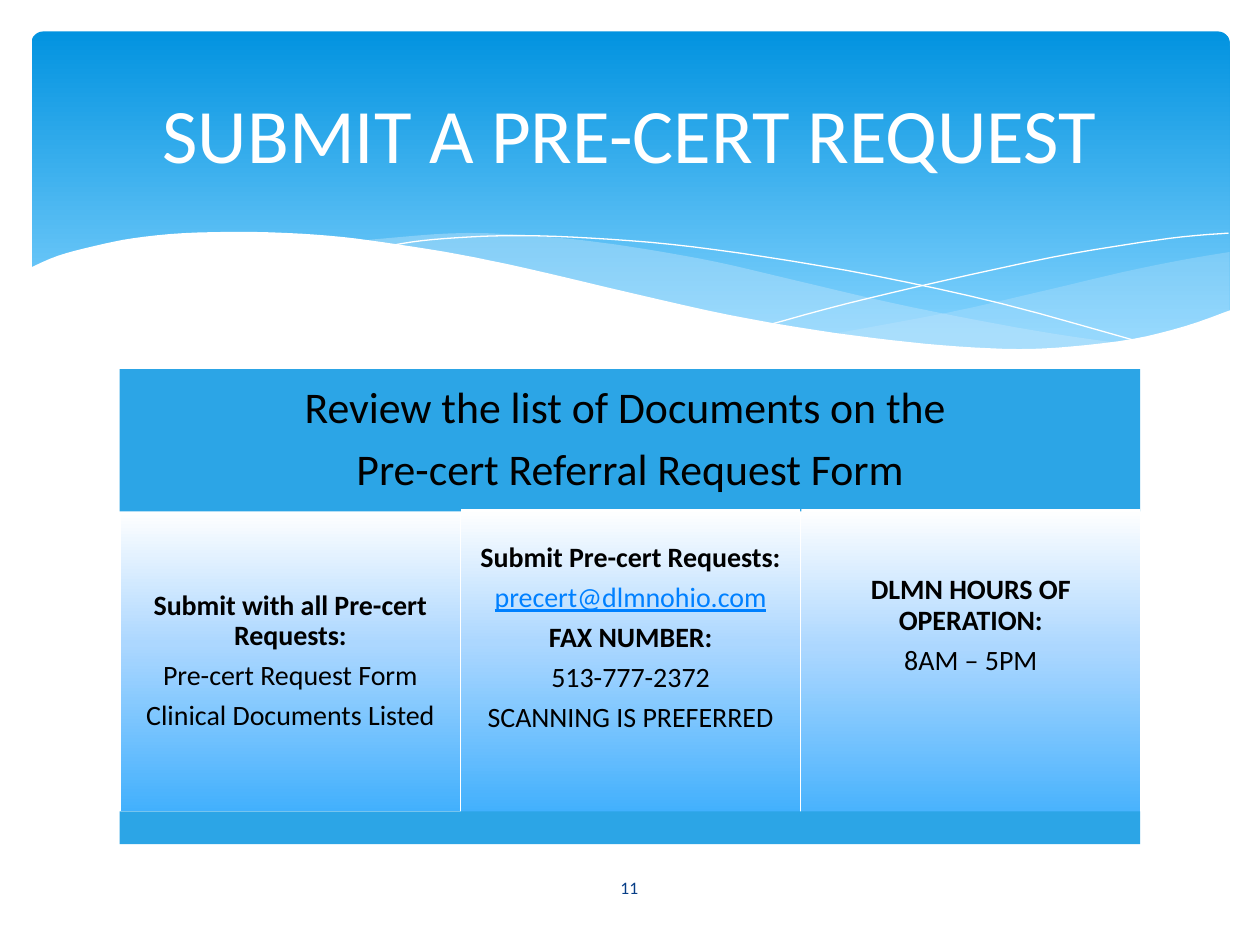
from lxml.etree import SubElement
from pptx import Presentation
from pptx.dml.color import RGBColor
from pptx.enum.shapes import MSO_SHAPE as Shape
from pptx.enum.text import MSO_ANCHOR as Anchor, PP_ALIGN as Align
from pptx.oxml.ns import qn
from pptx.util import Inches, Pt

deck = Presentation()
deck.slide_width, deck.slide_height = Inches(10), Inches(7.5)
slide = deck.slides.add_slide(deck.slide_layouts[6])
canvas = slide.shapes


def paint(part, stops, alpha=None):
    part.shadow.inherit = False
    part.line.fill.background()
    if len(stops) == 1:
        part.fill.solid()
        part.fill.fore_color.rgb = RGBColor.from_string(stops[0][1])
        if alpha:
            color = part._element.spPr.find(qn("a:solidFill"))[0]
            SubElement(color, qn("a:alpha"), val=str(alpha * 1000))
        return
    part.fill.gradient()
    part.fill.gradient_angle = 270
    ramp = part._element.spPr.find(qn("a:gradFill")).find(qn("a:gsLst"))
    for old_stop in list(ramp):
        ramp.remove(old_stop)
    for position, hex_color in stops:
        stop = SubElement(ramp, qn("a:gs"), pos=str(position * 1000))
        SubElement(stop, qn("a:srgbClr"), val=hex_color)


def write(part, lines, size, inset=0.07, top=None, color="000000"):
    frame = part.text_frame
    layout = {"word_wrap": True, "vertical_anchor": Anchor.MIDDLE if top is None else Anchor.TOP,
              "margin_left": Inches(inset), "margin_right": Inches(inset),
              "margin_top": Inches(inset if top is None else top), "margin_bottom": Inches(inset)}
    for key, value in layout.items():
        setattr(frame, key, value)
    for number, (words, style) in enumerate(lines):
        paragraph = frame.add_paragraph() if number else frame.paragraphs[0]
        spacing = {"alignment": Align.CENTER, "line_spacing": 0.9, "space_after": Pt(size * 0.35)}
        for key, value in (spacing if len(lines) > 1 else {"alignment": Align.CENTER}).items():
            setattr(paragraph, key, value)
        run = paragraph.add_run()
        run.text = words
        for key, value in {"name": "Calibri", "size": Pt(size), "bold": "b" in style,
                           "underline": "u" in style}.items():
            setattr(run.font, key, value)
        run.font.color.rgb = RGBColor.from_string("0080FF" if "u" in style else color)


banner = canvas.add_shape(Shape.ROUNDED_RECTANGLE, Inches(0.25), Inches(0.25), Inches(9.51), Inches(2.7))
banner.adjustments[0] = 0.034
paint(banner, [(0, "0293E0"), (90, "83D3FE"), (100, "83D3FE")])

right_swell = [[(9.76, 2), (9.35, 2.07), (8.91, 2.16), (8.32, 2.3), (7.53, 2.48), (6.61, 2.65)],
               [(6.61, 2.65), (7.19, 2.72), (7.69, 2.77), (8.14, 2.78), (8.63, 2.75), (9.05, 2.69),
                (9.42, 2.59), (9.76, 2.47)]]
middle_swell = [[(8.93, 2.73), (8.37, 2.65), (7.75, 2.54), (7.06, 2.4), (6.29, 2.22), (5.69, 2.08),
                 (5.14, 1.98), (4.65, 1.91), (4.2, 1.87), (3.8, 1.85), (3.44, 1.86), (2.86, 1.91)],
                [(2.86, 1.91), (3.42, 1.99), (4.04, 2.11), (4.91, 2.32), (5.66, 2.48), (6.34, 2.61),
                 (6.95, 2.7), (7.48, 2.76), (7.96, 2.78), (8.48, 2.77), (8.93, 2.73)]]
falling_line = [[(3.09, 1.95), (3.35, 1.91), (3.74, 1.88), (4.16, 1.87), (4.69, 1.89), (5.33, 1.94),
                 (6.08, 2.04), (6.95, 2.19), (7.95, 2.41), (9.07, 2.72)]]
rising_line = [[(6.13, 2.57), (6.72, 2.41), (7.48, 2.23), (8.36, 2.04), (8.95, 1.94), (9.38, 1.88), (9.75, 1.85)]]
white_wave = [[(9.77, 2.46), (9.4, 2.59), (8.99, 2.69), (8.5, 2.75), (8.09, 2.77), (7.61, 2.75),
               (7.08, 2.7), (6.48, 2.62), (5.79, 2.5), (5.03, 2.33), (4.18, 2.13), (3.65, 2.02),
               (3.16, 1.94), (2.71, 1.88), (2.3, 1.85), (1.93, 1.84), (1.46, 1.85), (1.06, 1.89),
               (0.76, 1.95), (0.46, 2.03), (0.23, 2.13)],
              [(0.23, 3.29), (9.77, 3.29)]]

units = 1000
for edges, hex_color, alpha in [(right_swell, "C6E7FC", 29), (middle_swell, "C6E7FC", 40),
                                (falling_line, None, None), (rising_line, None, None),
                                (white_wave, "FFFFFF", None)]:
    outline = []
    for edge in edges:
        padded = [edge[0], *edge, edge[-1]]
        for a, b, c, d in zip(padded, padded[1:], padded[2:], padded[3:]):
            for t in (0, 0.25, 0.5, 0.75):
                outline.append(tuple(
                    units * (b[i] + t / 2 * (c[i] - a[i] + t * (2 * a[i] - 5 * b[i] + 4 * c[i] - d[i]
                             + t * (3 * (b[i] - c[i]) + d[i] - a[i])))) for i in (0, 1)))
        outline.append(tuple(units * value for value in edge[-1]))
    pen = canvas.build_freeform(*outline[0], scale=Inches(1) / units)
    pen.add_line_segments(outline[1:], close=hex_color is not None)
    curve = pen.convert_to_shape()
    if hex_color:
        paint(curve, [(0, hex_color)], alpha)
    else:
        curve.shadow.inherit = False
        curve.fill.background()
        curve.line.color.rgb = RGBColor.from_string("FFFFFF")
        curve.line.width = Pt(0)

left, column_width, gap = 0.95, 2.7, 0.01
header = canvas.add_shape(Shape.RECTANGLE, Inches(left), Inches(2.93), Inches(3 * column_width), Inches(1.13))
paint(header, [(0, "2CA5E6")])
write(header, [("Review the list of Documents on the ", ""), ("Pre-cert Referral Request Form", "")], 25, 0.1)

columns = [
    (4.06, 2.38, None, [("Submit with all Pre-cert Requests:", "b"), ("Pre-cert Request Form", ""),
                        ("Clinical Documents Listed", "")]),
    (4.04, 2.41, 0.27, [("Submit Pre-cert Requests:", "b"), ("precert@dlmnohio.com", "u"),
                        ("FAX NUMBER:", "b"), ("513-777-2372", ""), ("SCANNING IS PREFERRED", "")]),
    (4.04, 2.5, 0.53, [("DLMN HOURS OF OPERATION:", "b"), ("8AM – 5PM", "")]),
]
for index, (top, height, text_top, lines) in enumerate(columns):
    column = canvas.add_shape(Shape.RECTANGLE, Inches(left + gap + index * column_width), Inches(top),
                              Inches(column_width - gap), Inches(height))
    paint(column, [(0, "FFFFFF"), (44, "ACD7FF"), (100, "42B0FD")])
    write(column, lines, 16, top=text_top)

footer = canvas.add_shape(Shape.RECTANGLE, Inches(left), Inches(6.44), Inches(3 * column_width), Inches(0.26))
paint(footer, [(0, "2CA5E6")])

for words, box, size, hex_color in [("11", (4.36, 6.84, 1.27, 0.4), 10, "073E87"),
                                    ("SUBMIT A PRE-CERT REQUEST", (0.5, 0.37, 9, 1.37), 44, "FFFFFF")]:
    label = canvas.add_textbox(*map(Inches, box))
    write(label, [(words, "")], size, 0.05, color=hex_color)

deck.save("out.pptx")
